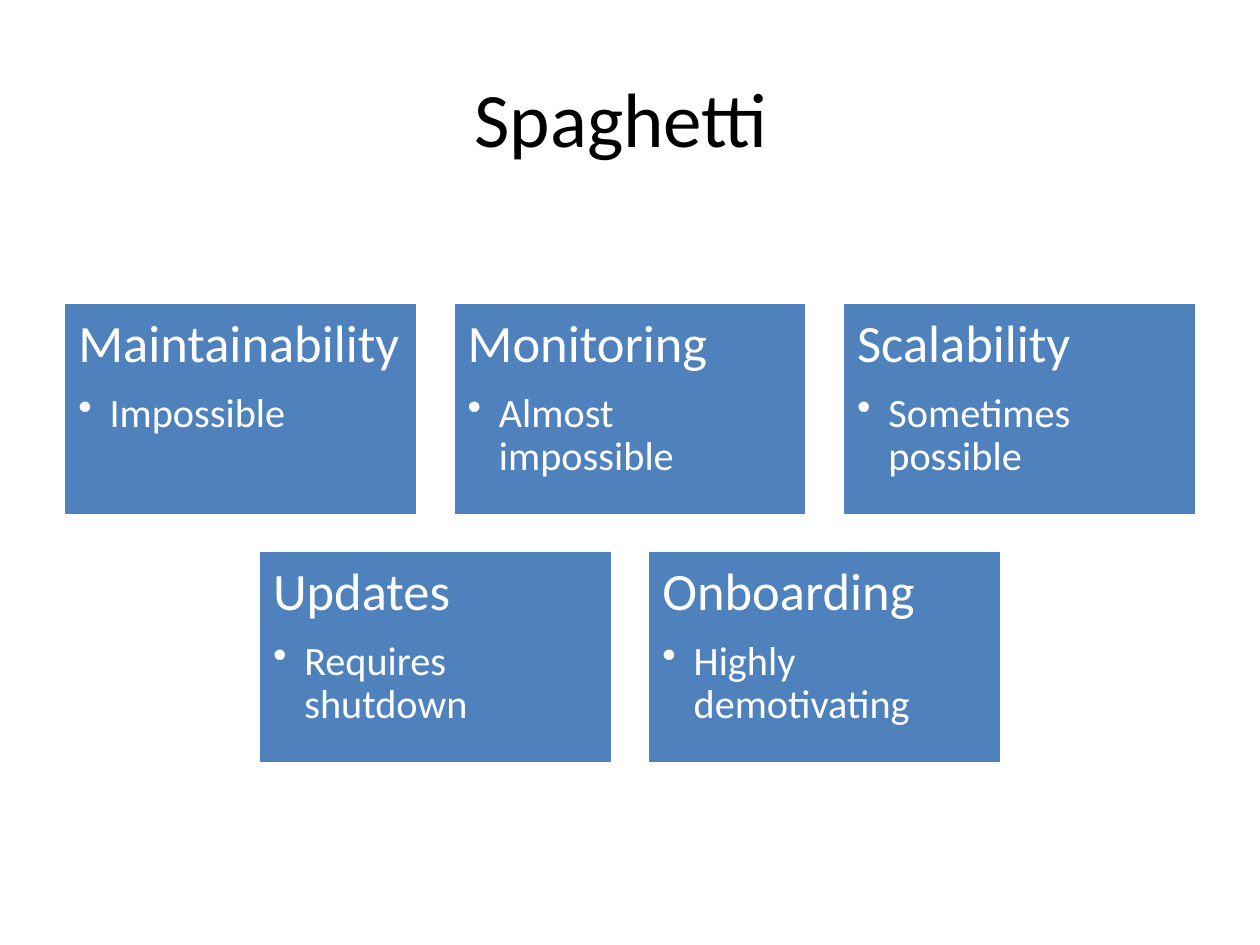
from lxml import etree
from pptx import Presentation
from pptx import util as u
from pptx.dml.color import RGBColor
from pptx.enum import shapes, text
from pptx.oxml.ns import qn

COLORS = {"title": "000000", "card": "4F81BD", "light": "FFFFFF"}
ROWS = [
    [("Maintainability", "Impossible"),
     ("Monitoring", "Almost impossible"),
     ("Scalability", "Sometimes possible")],
    [("Updates", "Requires shutdown"),
     ("Onboarding", "Highly demotivating")],
]
PAGE_WIDTH, PAGE_HEIGHT = 25.4, 19.05
CARD_WIDTH, CARD_HEIGHT, GAP = 7.14, 4.29, 0.71
CARDS_TOP, CARD_INSET = 6.1, 0.3


def write(para, words, size, color, align=text.PP_ALIGN.LEFT, spacing=1.0, after=0, bullet=False):
    para.alignment = align
    para.line_spacing = spacing
    para.space_after = u.Pt(after)
    if bullet:
        para.level = 1
        properties = para._p.get_or_add_pPr()
        properties.set("marL", str(u.Cm(0.63)))
        properties.set("indent", str(u.Cm(-0.63)))
        etree.SubElement(properties, qn("a:buChar")).set("char", "•")
    span = para.add_run()
    span.text = words
    span.font.name = "Calibri"
    span.font.size = u.Pt(size)
    span.font.color.rgb = RGBColor.from_string(COLORS[color])


deck = Presentation()
deck.slide_width = u.Cm(PAGE_WIDTH)
deck.slide_height = u.Cm(PAGE_HEIGHT)
page = deck.slides.add_slide(deck.slide_layouts[6])

title = page.shapes.add_textbox(u.Cm(1.27), u.Cm(0.76), u.Cm(22.86), u.Cm(3.18))
title.text_frame.word_wrap = True
title.text_frame.vertical_anchor = text.MSO_ANCHOR.MIDDLE
write(title.text_frame.paragraphs[0], "Spaghetti ", 44, "title", align=text.PP_ALIGN.CENTER)

for row, cards in enumerate(ROWS):
    row_width = len(cards) * (CARD_WIDTH + GAP) - GAP
    left = (PAGE_WIDTH - row_width) / 2
    top = CARDS_TOP + row * (CARD_HEIGHT + GAP)
    for column, (heading, verdict) in enumerate(cards):
        box = page.shapes.add_shape(
            shapes.MSO_SHAPE.RECTANGLE,
            u.Cm(left + column * (CARD_WIDTH + GAP)), u.Cm(top),
            u.Cm(CARD_WIDTH), u.Cm(CARD_HEIGHT))
        box.shadow.inherit = False
        box.fill.solid()
        box.fill.fore_color.rgb = RGBColor.from_string(COLORS["card"])
        box.line.color.rgb = RGBColor.from_string(COLORS["light"])
        box.line.width = u.Pt(2)
        frame = box.text_frame
        frame.word_wrap = True
        frame.vertical_anchor = text.MSO_ANCHOR.TOP
        frame.margin_left = frame.margin_right = u.Cm(CARD_INSET)
        frame.margin_top = frame.margin_bottom = u.Cm(CARD_INSET)
        write(frame.paragraphs[0], heading, 30, "light", spacing=0.9, after=10.5)
        write(frame.add_paragraph(), verdict, 23, "light", spacing=0.9, after=3.5, bullet=True)

deck.save("out.pptx")
